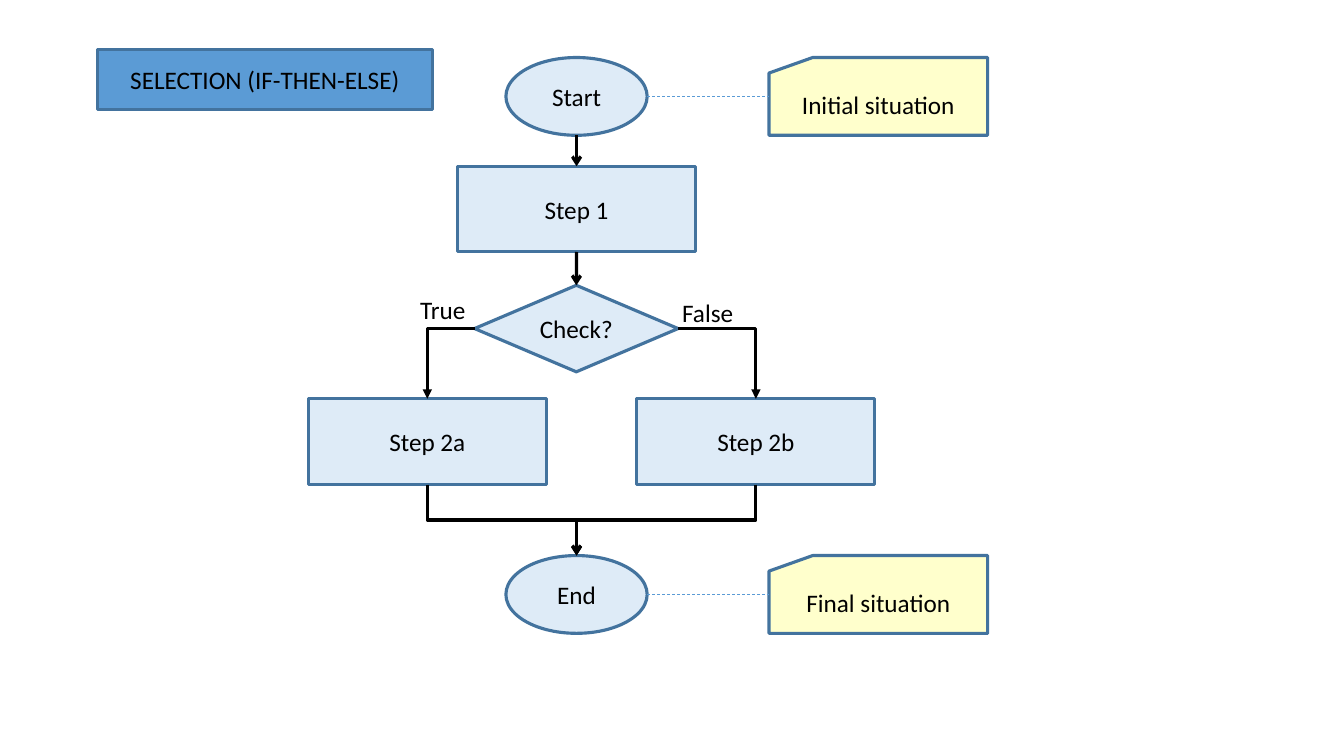
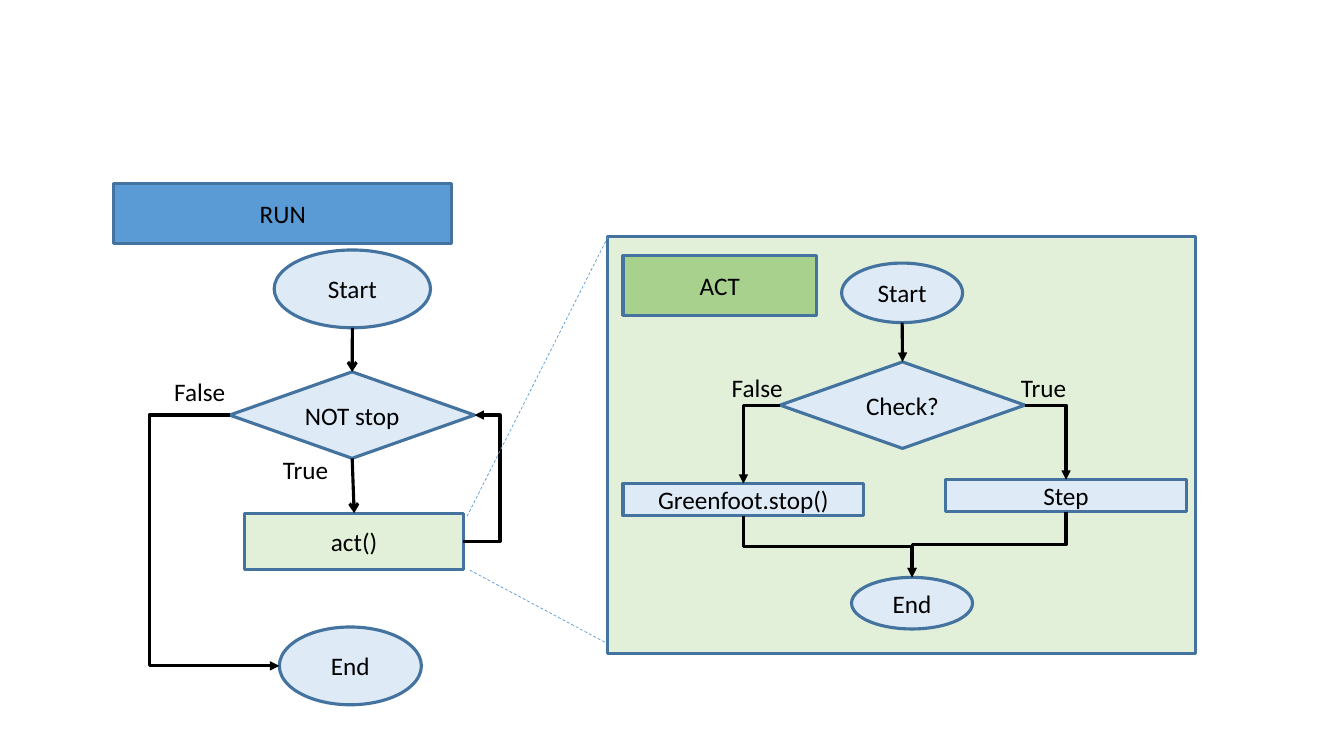
from lxml import etree
from pptx import Presentation
from pptx.dml.color import RGBColor
from pptx.enum.dml import MSO_LINE
from pptx.enum.shapes import MSO_CONNECTOR, MSO_SHAPE
from pptx.enum.text import MSO_ANCHOR, MSO_AUTO_SIZE, PP_ALIGN
from pptx.oxml.ns import qn
from pptx.util import Cm, Pt

OVAL = MSO_SHAPE.OVAL
BOX = MSO_SHAPE.RECTANGLE
DIAMOND = MSO_SHAPE.DIAMOND
CARD = MSO_SHAPE.FLOWCHART_CARD
STRAIGHT = MSO_CONNECTOR.STRAIGHT
ELBOW = MSO_CONNECTOR.ELBOW
DASH = MSO_LINE.DASH
MIDDLE = MSO_ANCHOR.MIDDLE
CENTER = PP_ALIGN.CENTER
NO_AUTOFIT = MSO_AUTO_SIZE.NONE
TOP, LEFT, BOTTOM, RIGHT = range(4)
TITLE_ONLY = 5

FONT = "Calibri"
BLACK = "000000"
BLUE = "5B9BD5"
OUTLINE = "43739E"
PALE_BLUE = "DEEBF7"
PALE_GREEN = "E2F0D9"
GREEN = "A9D18E"
YELLOW = "FFFFCC"
color = RGBColor.from_string


def add_text(slide, text, left, top, width, height, kind="label", fill=PALE_BLUE):
    place = Cm(left), Cm(top), Cm(width), Cm(height)
    if kind == "label":
        shape = slide.shapes.add_textbox(*place)
    elif kind == "title":
        shape = slide.shapes.title
        shape.left, shape.top, shape.width, shape.height = place
    else:
        shape = slide.shapes.add_shape(kind, *place)
    frame = shape.text_frame
    frame.auto_size = NO_AUTOFIT
    frame.word_wrap = kind != "label"
    paragraph = frame.paragraphs[0]
    if kind != "label":
        shape.shadow.inherit = False
        shape.fill.solid()
        shape.fill.fore_color.rgb = color(fill)
        shape.line.color.rgb = color(OUTLINE)
        shape.line.width = Pt(2.25)
        frame.vertical_anchor = MIDDLE
        paragraph.alignment = CENTER
    if text:
        run = paragraph.add_run()
        run.text = text
        run.font.name = FONT
        run.font.size = Pt(18)
        run.font.color.rgb = color(BLACK)
    return shape


def connect(slide, start=None, end=None, points=(0, 0, 0, 0), route="straight", bend=None, head="triangle"):
    kind = STRAIGHT if route == "straight" else ELBOW
    connector = slide.shapes.add_connector(kind, *[Cm(value) for value in points])
    properties = connector._element.spPr
    geometry = properties.find(qn("a:prstGeom"))
    if start:
        connector.begin_connect(*start)
        connector.end_connect(*end)
        for (shape, side), tag in ((start, "a:stCxn"), (end, "a:endCxn")):
            if shape.auto_shape_type == OVAL:
                next(connector._element.iter(qn(tag))).set("idx", str(side * 2))
    x1, y1, x2, y2 = connector.begin_x, connector.begin_y, connector.end_x, connector.end_y
    if route == "corner":
        geometry.set("prst", "bentConnector2")
    elif route == "loop":
        share = round((Cm(bend) - x1) / (x2 - x1) * 100000)
        guides = geometry.find(qn("a:avLst"))
        etree.SubElement(guides, qn("a:gd"), name="adj1", fmla=f"val {share}")
    elif route == "drop":
        across, down = abs(x2 - x1), y2 - y1
        connector.left, connector.top = (x1 + x2 - down) // 2, (y1 + y2 - across) // 2
        connector.width, connector.height = down, across
        transform = properties.find(qn("a:xfrm"))
        transform.set("rot", "5400000")
        transform.set("flipH", "0")
        transform.set("flipV", "1" if x2 > x1 else "0")
    connector.line.color.rgb = color(BLACK if head else BLUE)
    connector.line.width = Pt(2.25 if head else 0.5)
    if head:
        etree.SubElement(properties.find(qn("a:ln")), qn("a:tailEnd"), type=head)
    else:
        connector.line.dash_style = DASH
    etree.SubElement(properties, qn("a:effectLst"))


presentation = Presentation()
presentation.slide_width = Cm(33.87)
presentation.slide_height = Cm(19.05)
layout = presentation.slide_layouts[TITLE_ONLY]

slide = presentation.slides.add_slide(layout)
add_text(slide, "SELECTION (IF-THEN-ELSE)", 2.46, 1.24, 8.43, 1.52, kind="title", fill=BLUE)
start = add_text(slide, "Start", 12.75, 1.45, 3.56, 1.96, kind=OVAL)
first_step = add_text(slide, "Step 1", 11.53, 4.19, 6, 2.16, kind=BOX)
check = add_text(slide, "Check?", 11.96, 7.19, 5.13, 2.18, kind=DIAMOND)
end = add_text(slide, "End", 12.75, 14, 3.56, 1.96, kind=OVAL)
for upper, lower in ((start, first_step), (first_step, check)):
    connect(slide, (upper, BOTTOM), (lower, TOP), head="arrow")
for text, left, side in (("Step 2a", 7.77, LEFT), ("Step 2b", 16.05, RIGHT)):
    step = add_text(slide, text, left, 10.05, 6, 2.16, kind=BOX)
    connect(slide, (check, side), (step, TOP), route="corner")
    connect(slide, (step, BOTTOM), (end, TOP), route="drop", head="arrow")
for text, top, oval in (("Initial situation", 1.45, start), ("Final situation", 14, end)):
    card = add_text(slide, text, 19.38, top, 5.51, 1.96, kind=CARD, fill=YELLOW)
    connect(slide, (oval, RIGHT), (card, LEFT), head=None)
add_text(slide, "True", 10.34, 7.29, 1.7, 1.02)
add_text(slide, "False", 16.94, 7.37, 1.8, 1.02)

slide = presentation.slides.add_slide(layout)
add_text(slide, "RUN", 2.87, 4.62, 8.51, 1.52, kind="title", fill=BLUE)
start = add_text(slide, "Start", 6.91, 6.3, 3.94, 1.96, kind=OVAL)
condition = add_text(slide, "NOT stop", 5.79, 9.37, 6.17, 2.18, kind=DIAMOND)
act = add_text(slide, "act()", 6.17, 12.93, 5.51, 1.42, kind=BOX, fill=PALE_GREEN)
end = add_text(slide, "End", 7.04, 15.8, 3.58, 1.96, kind=OVAL)
for upper, lower in ((start, condition), (condition, act)):
    connect(slide, (upper, BOTTOM), (lower, TOP), head="arrow")
connect(slide, (act, RIGHT), (condition, RIGHT), route="loop", bend=12.6)
connect(slide, (condition, LEFT), (end, LEFT), route="loop", bend=3.76)
add_text(slide, "False", 4.14, 9.37, 1.8, 1.02)
add_text(slide, "True", 6.88, 11.33, 1.7, 1.02)

add_text(slide, "", 15.32, 5.97, 14.81, 10.49, kind=BOX, fill=PALE_GREEN)
for points in ((15.32, 5.97, 11.76, 13.03), (15.24, 16.18, 11.81, 14.35)):
    connect(slide, points=points, head=None)
add_text(slide, "ACT", 15.7, 6.45, 4.88, 1.5, kind=BOX, fill=GREEN)
start = add_text(slide, "Start", 21.21, 6.63, 3.05, 1.5, kind=OVAL)
check = add_text(slide, "Check?", 19.66, 9.12, 6.17, 2.18, kind=DIAMOND)
end = add_text(slide, "End", 21.46, 14.55, 3.05, 1.3, kind=OVAL)
connect(slide, (start, BOTTOM), (check, TOP))
for text, left, top, side in (("Greenfoot.stop()", 15.7, 12.19, LEFT), ("Step", 23.83, 12.09, RIGHT)):
    step = add_text(slide, text, left, top, 6.07, 0.81, kind=BOX)
    connect(slide, (check, side), (step, TOP), route="corner")
    connect(slide, (step, BOTTOM), (end, TOP), route="drop")
add_text(slide, "False", 18.19, 9.25, 1.8, 1.02)
add_text(slide, "True", 25.48, 9.25, 1.7, 1.02)

presentation.save("out.pptx")
